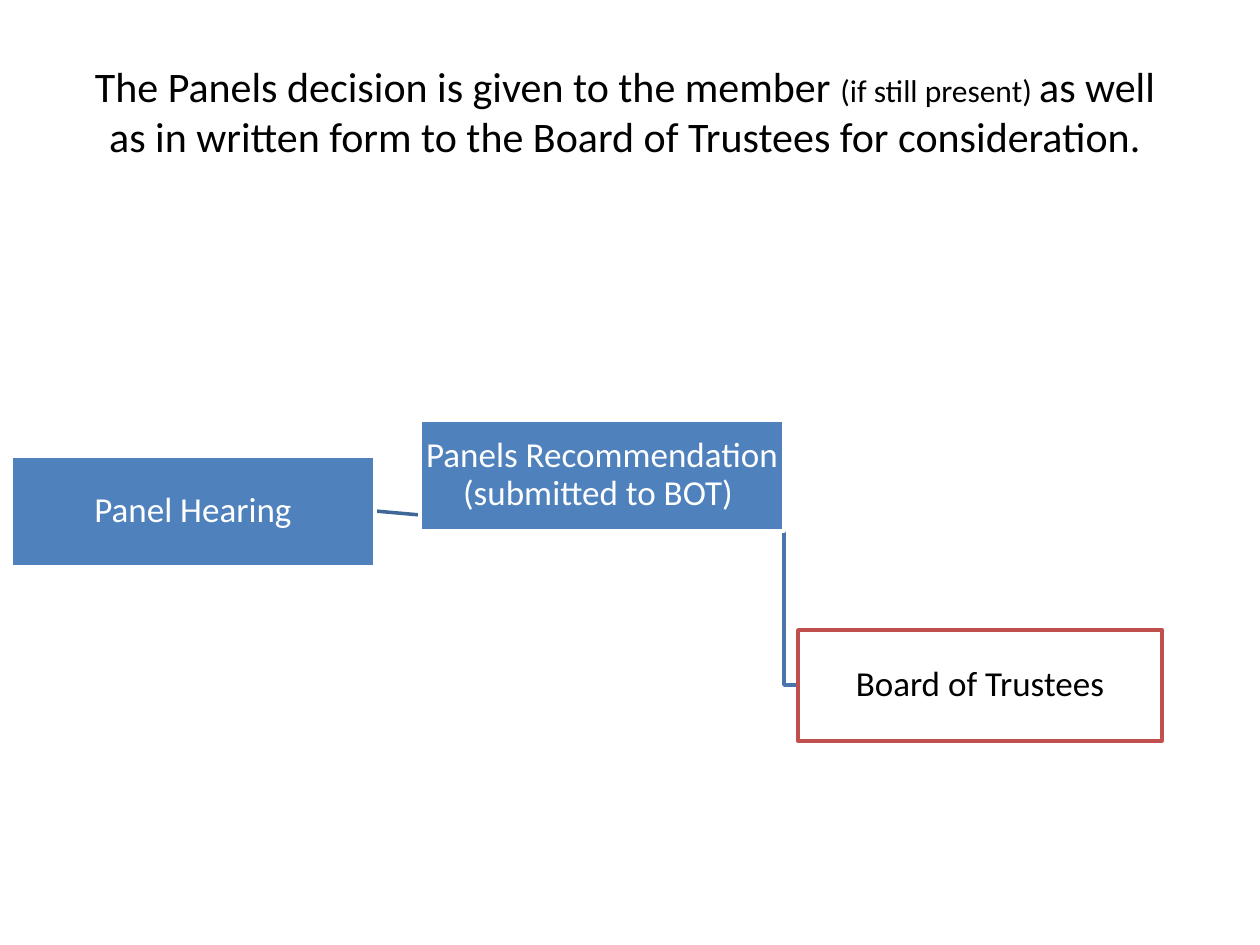
from dataclasses import dataclass

from lxml import etree
from pptx import Presentation
from pptx.dml.color import RGBColor
from pptx.enum.shapes import MSO_CONNECTOR, MSO_SHAPE
from pptx.enum.text import MSO_ANCHOR, MSO_AUTO_SIZE, PP_ALIGN
from pptx.oxml.ns import qn
from pptx.util import Emu, Pt

RECTANGLE = MSO_SHAPE.RECTANGLE
STRAIGHT = MSO_CONNECTOR.STRAIGHT
MIDDLE = MSO_ANCHOR.MIDDLE
CENTER = PP_ALIGN.CENTER
NO_AUTOFIT = MSO_AUTO_SIZE.NONE

EMU_PER_PX = 914400 / 126
TITLE_ONLY_LAYOUT = 5


@dataclass(frozen=True)
class Theme:
    font: str = "Calibri"
    white: str = "FFFFFF"
    black: str = "000000"
    blue: str = "4F81BD"
    red: str = "C0504D"
    first_link: str = "3F6797"
    second_link: str = "4875AC"
    title_size: int = 24
    aside_size: int = 18
    box_size: int = 20
    line_width: int = 2


@dataclass(frozen=True)
class Step:
    text: str
    left: int
    top: int
    fill: str
    outline: str
    ink: str
    width: int = 364
    height: int = 111

    @property
    def right(self) -> int:
        return self.left + self.width

    @property
    def middle(self) -> int:
        return self.top + self.height // 2


THEME = Theme()
HEARING = Step("Panel Hearing", 11, 456, THEME.blue, THEME.white, THEME.white)
RECOMMENDATION = Step("Panels Recommendation (submitted to BOT) ", 420, 420,
                      THEME.blue, THEME.white, THEME.white)
TRUSTEES = Step("Board of Trustees", 798, 630, THEME.white, THEME.red, THEME.black)
TITLE_SPANS = (
    ("The Panels decision is given to the member ", THEME.title_size),
    ("(if still present) ", THEME.aside_size),
    ("as well as in written form to the Board of Trustees for consideration.",
     THEME.title_size),
)


def px(length: int) -> Emu:
    return Emu(round(length * EMU_PER_PX))


def add_span(para, text: str, size: int, color: str) -> None:
    span = para.add_run()
    span.text = text
    span.font.name = THEME.font
    span.font.size = Pt(size)
    span.font.color.rgb = RGBColor.from_string(color)


def style_line(line, color: str) -> None:
    line.color.rgb = RGBColor.from_string(color)
    line.width = Pt(THEME.line_width)


def fill_title(page) -> None:
    title = page.shapes.title
    title.left, title.top, title.width, title.height = map(px, (63, 53, 1124, 115))
    frame = title.text_frame
    frame.auto_size = NO_AUTOFIT
    frame.vertical_anchor = MIDDLE
    para = frame.paragraphs[0]
    para.alignment = CENTER
    for text, size in TITLE_SPANS:
        add_span(para, text, size, THEME.black)


def add_straight_link(page, start: Step, end: Step) -> None:
    """Run from the right side of one step to the centre of the next."""
    link = page.shapes.add_connector(
        STRAIGHT, px(start.right), px(start.middle),
        px(end.left + end.width // 2), px(end.top + end.height))
    style_line(link.line, THEME.first_link)
    etree.SubElement(link._element.spPr, qn("a:effectLst"))


def add_elbow_link(page, start: Step, end: Step) -> None:
    """Drop from the right side of one step, then turn into the next."""
    builder = page.shapes.build_freeform(start.right, start.middle, EMU_PER_PX)
    builder.add_line_segments(
        [(start.right, end.middle), (end.left, end.middle)], close=False)
    link = builder.convert_to_shape()
    link.shadow.inherit = False
    link.fill.background()
    style_line(link.line, THEME.second_link)


def add_step(page, step: Step) -> None:
    box = page.shapes.add_shape(
        RECTANGLE, px(step.left), px(step.top), px(step.width), px(step.height))
    box.shadow.inherit = False
    box.fill.solid()
    box.fill.fore_color.rgb = RGBColor.from_string(step.fill)
    style_line(box.line, step.outline)
    frame = box.text_frame
    frame.word_wrap = True
    frame.vertical_anchor = MIDDLE
    frame.margin_left = frame.margin_right = px(1)
    frame.margin_top = frame.margin_bottom = px(1)
    para = frame.paragraphs[0]
    para.alignment = CENTER
    para.line_spacing = 0.9
    add_span(para, step.text, THEME.box_size, step.ink)


def main() -> None:
    deck = Presentation()
    deck.slide_width, deck.slide_height = px(1260), px(945)
    page = deck.slides.add_slide(deck.slide_layouts[TITLE_ONLY_LAYOUT])
    fill_title(page)
    add_elbow_link(page, RECOMMENDATION, TRUSTEES)
    add_straight_link(page, HEARING, RECOMMENDATION)
    for step in (HEARING, RECOMMENDATION, TRUSTEES):
        add_step(page, step)
    deck.save("out.pptx")


if __name__ == "__main__":
    main()
